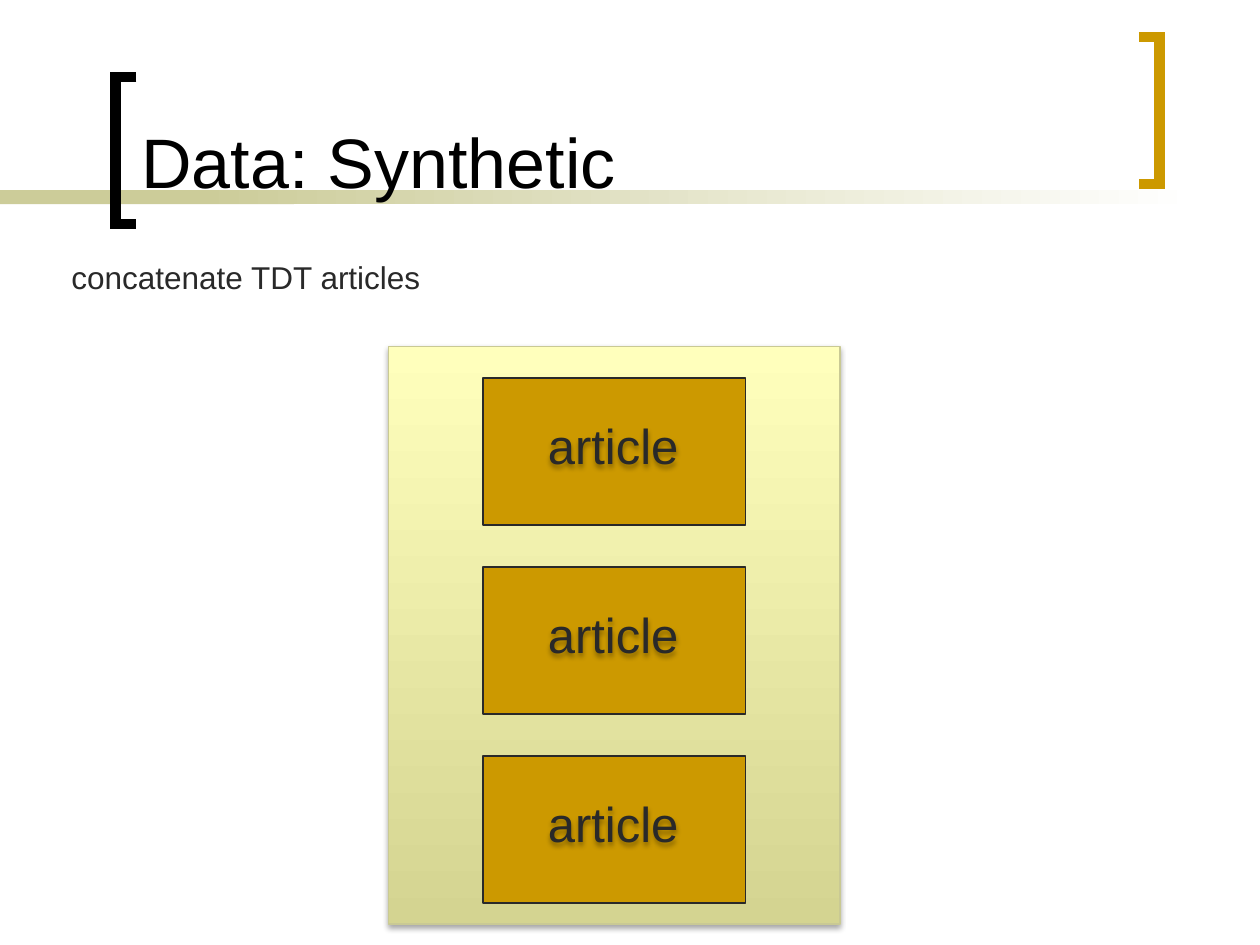
from typing import NamedTuple

from lxml import etree
from pptx import Presentation
from pptx import oxml
from pptx.dml.color import RGBColor
from pptx.enum import shapes, text
from pptx.util import Pt

BLACK = RGBColor(0, 0, 0)
WHITE = RGBColor(255, 255, 255)
DARK = RGBColor(0x29, 0x29, 0x29)
GOLD = RGBColor(0xCC, 0x99, 0x00)
SAND = RGBColor(0xCC, 0xCC, 0x99)
OLIVE = RGBColor(0xD4, 0xD4, 0x91)
CREAM = RGBColor(0xFF, 0xFF, 0xBC)
EDGE = RGBColor(0xC9, 0xC9, 0x94)

NS = "http://schemas.openxmlformats.org/drawingml/2006/main"
SHADE = (
    f'<a:effectLst xmlns:a="{NS}"><a:outerShdw blurRad="39370" dist="22860" '
    'dir="5400000" rotWithShape="0"><a:srgbClr val="000000">'
    '<a:alpha val="35000"/></a:srgbClr></a:outerShdw></a:effectLst>'
)


class Box(NamedTuple):
    left: float
    top: float
    width: float
    height: float


class Bracket(NamedTuple):
    spine: float
    tip: float
    top: float
    color: RGBColor


BARS = (
    (Box(0, 108.75, 168, 8), (SAND,)),
    (Box(114, 108.75, 570, 8), (SAND, WHITE)),
)
BRACKETS = (
    Bracket(66, 78, 44, BLACK),
    Bracket(662.75, 650.75, 21.25, GOLD),
)
PANEL = Box(222, 198, 258, 330)
CARDS = [Box(276, 216 + 108 * row, 150, 84) for row in range(3)]


def add_shade(shape) -> None:
    for old in shape._element.spPr.findall(f"{{{NS}}}effectLst"):
        shape._element.spPr.remove(old)
    shape._element.spPr.append(oxml.parse_xml(SHADE))


def add_rect(host, box: Box, *fills: RGBColor, edge=None, angle=0):
    rect = host.add_shape(shapes.MSO_SHAPE.RECTANGLE, *map(Pt, box))
    rect.shadow.inherit = False
    if len(fills) == 1:
        rect.fill.solid()
        rect.fill.fore_color.rgb = fills[0]
    else:
        rect.fill.gradient()
        rect.fill.gradient_angle = angle
        for stop, color in zip(rect.fill.gradient_stops, fills):
            stop.color.rgb = color
    if edge is None:
        rect.line.fill.background()
    else:
        rect.line.color.rgb = edge
        rect.line.width = Pt(0.75)
    return rect


def add_bracket(host, mark: Bracket) -> None:
    base = mark.top + 84
    pen = host.build_freeform(Pt(mark.tip), Pt(mark.top))
    pen.add_line_segments(
        [(Pt(x), Pt(y)) for x, y in (
            (mark.spine, mark.top), (mark.spine, base), (mark.tip, base))],
        close=False,
    )
    form = pen.convert_to_shape()
    form.shadow.inherit = False
    form.fill.background()
    form.line.color.rgb = mark.color
    form.line.width = Pt(6)
    etree.SubElement(form.line._get_or_add_ln(), f"{{{NS}}}miter", lim="800000")


def add_text(host, words: str, box: Box, *, size: float, color=DARK,
             anchor=text.MSO_ANCHOR.TOP, wrap=False):
    label = host.add_textbox(*map(Pt, box))
    frame = label.text_frame
    frame.word_wrap = wrap
    frame.vertical_anchor = anchor
    if not wrap:
        frame.auto_size = text.MSO_AUTO_SIZE.SHAPE_TO_FIT_TEXT
    run = frame.paragraphs[0].add_run()
    run.text = words
    run.font.name = "Arial"
    run.font.size = Pt(size)
    run.font.color.rgb = color
    return label


def add_card(host, box: Box) -> None:
    group = host.add_group_shape().shapes
    add_rect(group, box, GOLD, edge=DARK)
    spot = Box(box.left + 30, box.top + 18, 90, 41)
    add_shade(add_text(group, "article", spot, size=28))


def main() -> None:
    deck = Presentation()
    deck.slide_width, deck.slide_height = Pt(720), Pt(540)
    host = deck.slides.add_slide(deck.slide_layouts[6]).shapes
    for box, fills in BARS:
        add_rect(host, box, *fills)
    for mark in BRACKETS:
        add_bracket(host, mark)
    add_text(host, "Data: Synthetic", Box(73.75, 8, 564, 111.5), size=40,
             color=BLACK, anchor=text.MSO_ANCHOR.BOTTOM, wrap=True)
    add_text(host, "concatenate TDT articles", Box(33.75, 144, 216, 29), size=18)
    add_shade(add_rect(host, PANEL, OLIVE, CREAM, edge=EDGE, angle=90))
    for box in CARDS:
        add_card(host, box)
    deck.save("out.pptx")


if __name__ == "__main__":
    main()
